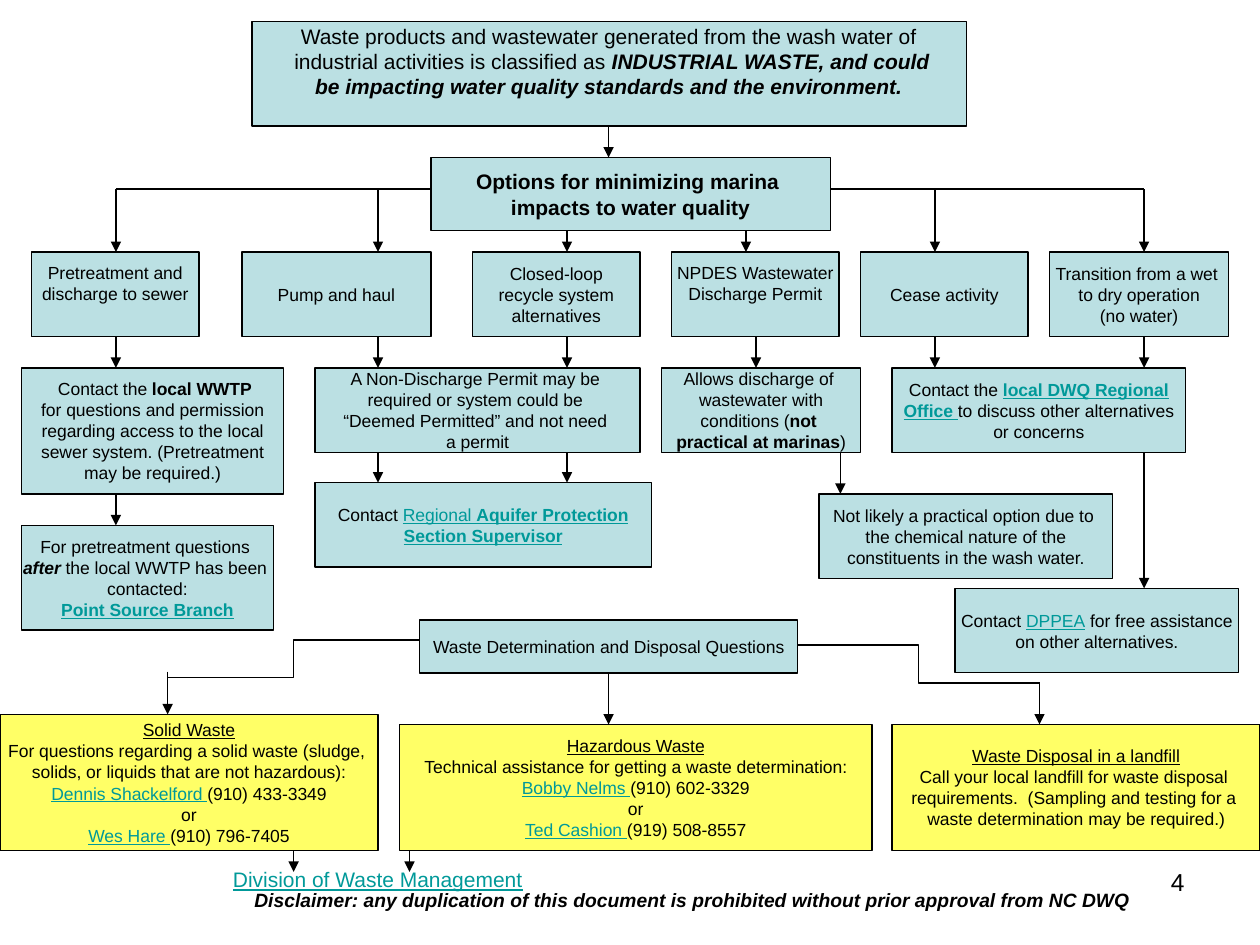
import dataclasses

import pptx
import pptx.dml.color
import pptx.enum.shapes
import pptx.enum.text
import pptx.oxml
import pptx.oxml.ns
import pptx.util

Inches = pptx.util.Inches
Kind = pptx.enum.shapes.MSO_CONNECTOR
Align = pptx.enum.text.PP_ALIGN
Anchor = pptx.enum.text.MSO_ANCHOR

HUES = {"ink": "000000", "link": "009999", "blue": "BBE0E3", "gold": "FFFF66"}
MARKS = {"b": "bold", "i": "italic", "u": "underline"}
LINE = 0.75


@dataclasses.dataclass
class Box:
    left: float
    top: float
    width: float
    height: float
    text: str
    size: int = 10
    fill: str = "blue"
    lift: float = 0  # extra bottom margin that raises the text


@dataclasses.dataclass
class Note:
    left: float
    top: float
    width: float
    height: float
    text: str
    size: int
    align: Align = Align.LEFT


@dataclasses.dataclass
class Drop:
    """A row of downward arrows."""
    top: float
    end: float
    spots: tuple[float, ...]


# Between bars, "marks:text" is a styled run; the mark "l" gives the link colour.
BOXES = [
    Box(2, 0.17, 5.67, 0.83,
        "Waste products and wastewater generated from the wash water of\n"
        " industrial activities is classified as |bi:INDUSTRIAL WASTE, and could|\n"
        "|bi:be impacting water quality standards and the environment.|", 12, lift=0.2),
    Box(3.42, 1.25, 3.17, 0.58,
        "|b:Options for minimizing marina |\n|b:impacts to water quality|", 12),
    Box(0.25, 2, 1.33, 0.67, "Pretreatment and\ndischarge to sewer", lift=0.17),
    Box(1.92, 2, 1.5, 0.67, "Pump and haul"),
    Box(3.75, 2, 1.33, 0.67, "Closed-loop\nrecycle system\nalternatives"),
    Box(5.33, 2, 1.33, 0.67, "NPDES Wastewater\nDischarge Permit", lift=0.17),
    Box(6.83, 2, 1.33, 0.67, "Cease activity"),
    Box(8.33, 2, 1.42, 0.67, "Transition from a wet \nto dry operation\n(no water)"),
    Box(0.17, 2.92, 2.08, 1,
        " Contact the |b:local WWTP|\nfor questions and permission\n"
        " regarding access to the local \nsewer system. (Pretreatment\n"
        "may be required.)"),
    Box(2.5, 2.92, 2.58, 0.67,
        "A Non-Discharge Permit may be \nrequired or system could be \n"
        "“Deemed Permitted” and not need \na permit"),
    Box(5.25, 2.92, 1.58, 0.67,
        "Allows discharge of \nwastewater with\nconditions (|b:not |\n"
        "|b:practical at marinas|)"),
    Box(7.08, 2.92, 2.33, 0.67,
        "Contact the |bul:local DWQ Regional|\n"
        "|bul:Office||ul: |to discuss other alternatives\nor concerns"),
    Box(0.17, 4.17, 2, 0.83,
        "For pretreatment questions \n|bi:after| the local WWTP has been \n"
        "contacted:\n|bul:Point Source Branch|"),
    Box(2.5, 3.83, 2.67, 0.67,
        "Contact |ul:Regional ||bul:Aquifer Protection|\n|bul:Section Supervisor|"),
    Box(6.5, 3.92, 2.33, 0.67,
        "Not likely a practical option due to \nthe chemical nature of the\n"
        "constituents in the wash water."),
    Box(7.58, 4.67, 2.25, 0.67,
        "Contact |ul:DPPEA| for free assistance\non other alternatives."),
    Box(3.33, 4.92, 3, 0.42, "Waste Determination and Disposal Questions"),
    Box(0, 5.67, 3, 1.08,
        "|u:Solid Waste|\nFor questions regarding a solid waste (sludge, \n"
        "solids, or liquids that are not hazardous):\n"
        "|ul:Dennis Shackelford |(910) 433-3349\n or \n"
        "|ul:Wes Hare |(910) 796-7405", fill="gold"),
    Box(3.17, 5.75, 3.75, 1,
        "|u:Hazardous Waste|\n"
        "Technical assistance for getting a waste determination:\n"
        "|ul:Bobby Nelms |(910) 602-3329\nor\n"
        "|ul:Ted Cashion |(919) 508-8557", fill="gold"),
    Box(7.08, 5.75, 2.92, 1,
        "|u:Waste Disposal in a landfill|\n"
        "Call your local landfill for waste disposal \n"
        "requirements.  (Sampling and testing for a \n"
        "waste determination may be required.)", fill="gold"),
]

NOTES = [
    Note(1.92, 7, 7.25, 0.29,
         "|bi:Disclaimer: any duplication of this document is prohibited "
         "without prior approval from NC DWQ|", 11),
    Note(7.17, 6.83, 2.33, 0.52, "4", 14, Align.RIGHT),
    Note(1.75, 6.83, 2.58, 0.3, "|ul:Division of Waste Management|", 12),
]

DROPS = [
    Drop(1, 1.25, (4.83,)),
    Drop(1.5, 2, (0.92, 3, 5.92, 7.42, 9.08)),
    Drop(1.83, 2, (4.5,)),
    Drop(2.67, 2.92, (0.92, 3, 4.5, 6, 7.42, 9.08)),
    Drop(3.58, 3.83, (3, 4.5)),
    Drop(3.58, 3.92, (6.67,)),
    Drop(3.58, 4.67, (9.08,)),
    Drop(3.92, 4.17, (0.92,)),
    Drop(5.33, 5.67, (1.33,)),
    Drop(5.33, 5.75, (4.83,)),
    Drop(5.42, 5.75, (8.25,)),
    Drop(6.75, 6.92, (2.33, 3.25)),
]

LINKS = [
    (Kind.STRAIGHT, 0.92, 1.5, 4.17, 1.5),
    (Kind.STRAIGHT, 5.5, 1.5, 9.08, 1.5),
    (Kind.ELBOW, 3.33, 5.08, 1.33, 5.38),
    (Kind.ELBOW, 6.33, 5.12, 8.25, 5.42),
]


def hue(name: str) -> pptx.dml.color.RGBColor:
    return pptx.dml.color.RGBColor.from_string(HUES[name])


def apply(target, values: dict) -> None:
    for name, value in values.items():
        setattr(target, name, value)


def write(frame, text: str, size: int, align: Align) -> None:
    """Fill a text frame, one paragraph a line, with styled runs."""
    for row, line in enumerate(text.split("\n")):
        para = frame.paragraphs[0] if row == 0 else frame.add_paragraph()
        para.alignment = align
        for spot, piece in enumerate(line.split("|")):
            marks, _, words = piece.partition(":") if spot % 2 else ("", "", piece)
            if not words:
                continue
            run = para.add_run()
            run.text = words
            apply(run.font, {"name": "Arial", "size": pptx.util.Pt(size)})
            apply(run.font, {MARKS[m]: True for m in marks if m in MARKS})
            run.font.color.rgb = hue("link" if "l" in marks else "ink")


def draw_box(slide, box: Box) -> None:
    shape = slide.shapes.add_shape(
        pptx.enum.shapes.MSO_SHAPE.FLOWCHART_PROCESS,
        *map(Inches, (box.left, box.top, box.width, box.height)))
    shape.shadow.inherit = False
    shape.fill.solid()
    shape.fill.fore_color.rgb = hue(box.fill)
    shape.line.color.rgb = hue("ink")
    shape.line.width = pptx.util.Pt(LINE)
    apply(shape.text_frame, {
        "word_wrap": False,
        "vertical_anchor": Anchor.MIDDLE,
        "margin_bottom": Inches(0.05 + box.lift),
    })
    write(shape.text_frame, box.text, box.size, Align.CENTER)


def draw_note(slide, note: Note) -> None:
    shape = slide.shapes.add_textbox(
        *map(Inches, (note.left, note.top, note.width, note.height)))
    shape.text_frame.word_wrap = True
    write(shape.text_frame, note.text, note.size, note.align)


def draw_link(slide, kind: Kind, *ends: float, arrow: bool = False) -> None:
    link = slide.shapes.add_connector(kind, *map(Inches, ends))
    link.line.color.rgb = hue("ink")
    link.line.width = pptx.util.Pt(LINE)
    props = link.element.spPr
    if arrow:
        tail = pptx.oxml.parse_xml(
            f'<a:tailEnd {pptx.oxml.ns.nsdecls("a")} type="triangle"/>')
        props.find(pptx.oxml.ns.qn("a:ln")).append(tail)
    props.append(pptx.oxml.parse_xml(f'<a:effectLst {pptx.oxml.ns.nsdecls("a")}/>'))


def main() -> None:
    deck = pptx.Presentation()
    apply(deck, {"slide_width": Inches(10), "slide_height": Inches(7.5)})
    slide = deck.slides.add_slide(deck.slide_layouts[6])
    for note in NOTES:
        draw_note(slide, note)
    for link in LINKS:
        draw_link(slide, *link)
    for drop in DROPS:
        for x in drop.spots:
            draw_link(slide, Kind.STRAIGHT, x, drop.top, x, drop.end, arrow=True)
    for box in BOXES:
        draw_box(slide, box)
    deck.save("out.pptx")


if __name__ == "__main__":
    main()
